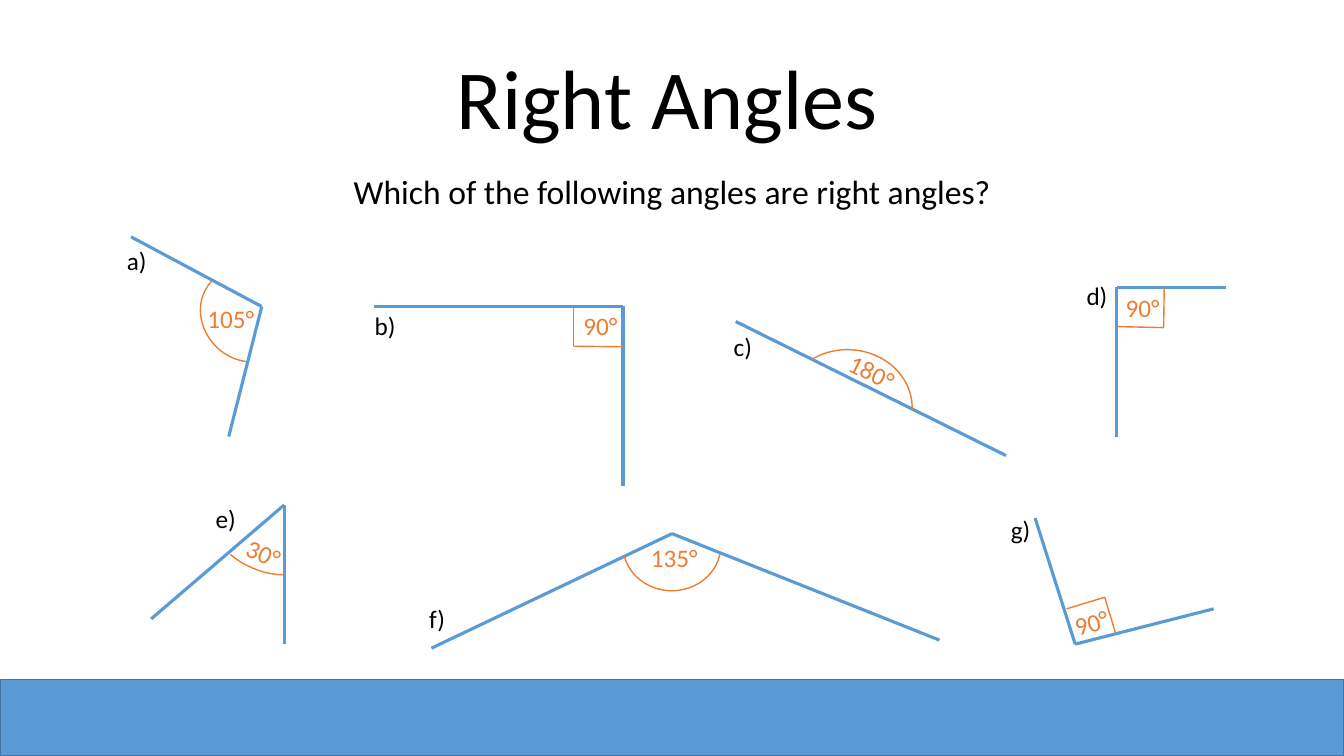
from dataclasses import dataclass
from itertools import pairwise

from lxml import etree
from pptx import Presentation
from pptx import util as u
from pptx.dml import color
from pptx.enum import shapes, text
from pptx.oxml import ns

Pt = u.Pt


@dataclass(frozen=True)
class Theme:
    font: str = "Calibri"
    ink: str = "000000"
    blue: str = "5B9BD5"
    edge: str = "43739E"
    mark: str = "ED7D31"
    head: float = 60
    body: float = 24
    small: float = 18
    ray: float = 2.25
    thin: float = 1


THEME = Theme()

ANGLES = [
    dict(name="a)", tag=(83.5, 171.4),
         rays=[(93.6, 169.2), (187, 219), (163.4, 311.8)],
         value="105°", spot=(141.1, 213.1),
         arc=(141.1, 194.4, 69.8, 61.9), sweep=(223.6, 357.69), turn=226.9),
    dict(name="b)", tag=(260.6, 218.2),
         rays=[(267.1, 218.9), (445, 218.9), (445, 347)],
         value="90°", spot=(409.7, 218.2),
         square=[(409.7, 218.9), (409.7, 247.3), (445, 247.7)]),
    dict(name="c)", tag=(517, 233.3),
         rays=[(525.6, 229.7), (718.6, 325.4)],
         value="180°", spot=(596.2, 262.8), tilt=26.6,
         arc=(560.2, 249.8, 91.4, 81.4), sweep=(230.54, 0), turn=3.2),
    dict(name="d)", tag=(769, 196.6),
         rays=[(875.5, 205.2), (797.8, 205.2), (797.8, 312.5)],
         value="90°", spot=(797, 205.2),
         square=[(831.6, 205.2), (831.2, 234), (797.8, 233.3)]),
    dict(name="e)", tag=(146.9, 355.7),
         rays=[(108, 442.1), (203, 360.7), (203, 460.1)],
         value="30°", spot=(168.5, 383.8), tilt=23.7, wide=53.3,
         arc=(152.6, 372.2, 67.7, 34.6), sweep=(207.67, 319.15), turn=204.1),
    dict(name="f)", tag=(299.5, 427.7),
         rays=[(308.2, 463), (480, 381.2), (671, 457.2)],
         value="135°", spot=(457.9, 383.8),
         arc=(445, 357.8, 69.8, 64.1), sweep=(189.8, 347.93), turn=180),
    dict(name="g)", tag=(715, 363.6),
         rays=[(739.4, 370.1), (768, 460.1), (866.9, 434.9)],
         value="90°", spot=(758.9, 420.5), tilt=342.6, wide=102.2,
         square=[(761.8, 434.9), (789.1, 426.6), (797, 452.9)]),
]


def rgb(code):
    return color.RGBColor.from_string(code)


def stroke(line, tint, width):
    line.color.rgb = rgb(tint)
    line.width = Pt(width)


def trace(slide, points, tint, width):
    for start, end in pairwise(points):
        line = slide.shapes.add_connector(
            shapes.MSO_CONNECTOR.STRAIGHT, *map(Pt, start + end))
        stroke(line.line, tint, width)
        etree.SubElement(line._element.spPr, ns.qn("a:effectLst"))


def write(shape, words, size, tint):
    shape.text_frame.word_wrap = True
    para = shape.text_frame.paragraphs[0]
    para.text = words
    for run in para.runs:
        run.font.name = THEME.font
        run.font.size = Pt(size)
        run.font.color.rgb = rgb(tint)
    return para


def center(para):
    para.alignment = text.PP_ALIGN.CENTER
    para.line_spacing = 0.9


def label(slide, words, spot, wide, tint, tilt=0):
    box = slide.shapes.add_textbox(*map(Pt, (*spot, wide, 29)))
    write(box, words, THEME.small, tint)
    box.text_frame.auto_size = text.MSO_AUTO_SIZE.SHAPE_TO_FIT_TEXT
    box.rotation = tilt


def bend(slide, frame, sweep, turn):
    arc = slide.shapes.add_shape(shapes.MSO_SHAPE.ARC, *map(Pt, frame))
    arc.shadow.inherit = False
    for index, degrees in enumerate(sweep):
        arc.adjustments[index] = degrees * 0.6
    arc.rotation = turn
    arc.fill.background()
    stroke(arc.line, THEME.mark, THEME.thin)


def angle(slide, item):
    trace(slide, item["rays"], THEME.blue, THEME.ray)
    label(slide, item["value"], item["spot"], item.get("wide", 100),
          THEME.mark, item.get("tilt", 0))
    label(slide, item["name"], item["tag"], 42.5, THEME.ink)
    if "arc" in item:
        bend(slide, item["arc"], item["sweep"], item["turn"])
    else:
        trace(slide, item["square"], THEME.mark, THEME.thin)


def banner(slide):
    bar = slide.shapes.add_shape(
        shapes.MSO_SHAPE.RECTANGLE, *map(Pt, (0, 485.3, 960, 54.7)))
    bar.shadow.inherit = False
    bar.fill.solid()
    bar.fill.fore_color.rgb = rgb(THEME.blue)
    stroke(bar.line, THEME.edge, THEME.thin)


def heading(slide):
    title = slide.shapes.title
    title.left, title.top, title.width, title.height = map(
        Pt, (62.6, 5, 828, 104.4))
    center(write(title, "Right Angles", THEME.head, THEME.ink))
    title.text_frame.vertical_anchor = text.MSO_ANCHOR.BOTTOM


def question(slide):
    box = slide.shapes.add_textbox(*map(Pt, (66.2, 121.7, 828, 342.7)))
    para = write(box, "Which of the following angles are right angles?",
                 THEME.body, THEME.ink)
    center(para)
    para.space_before = Pt(10)


def main():
    deck = Presentation()
    deck.slide_width, deck.slide_height = Pt(960), Pt(540)
    slide = deck.slides.add_slide(deck.slide_layouts.get_by_name("Title Only"))
    banner(slide)
    heading(slide)
    question(slide)
    for item in ANGLES:
        angle(slide, item)
    deck.save("out.pptx")


if __name__ == "__main__":
    main()
